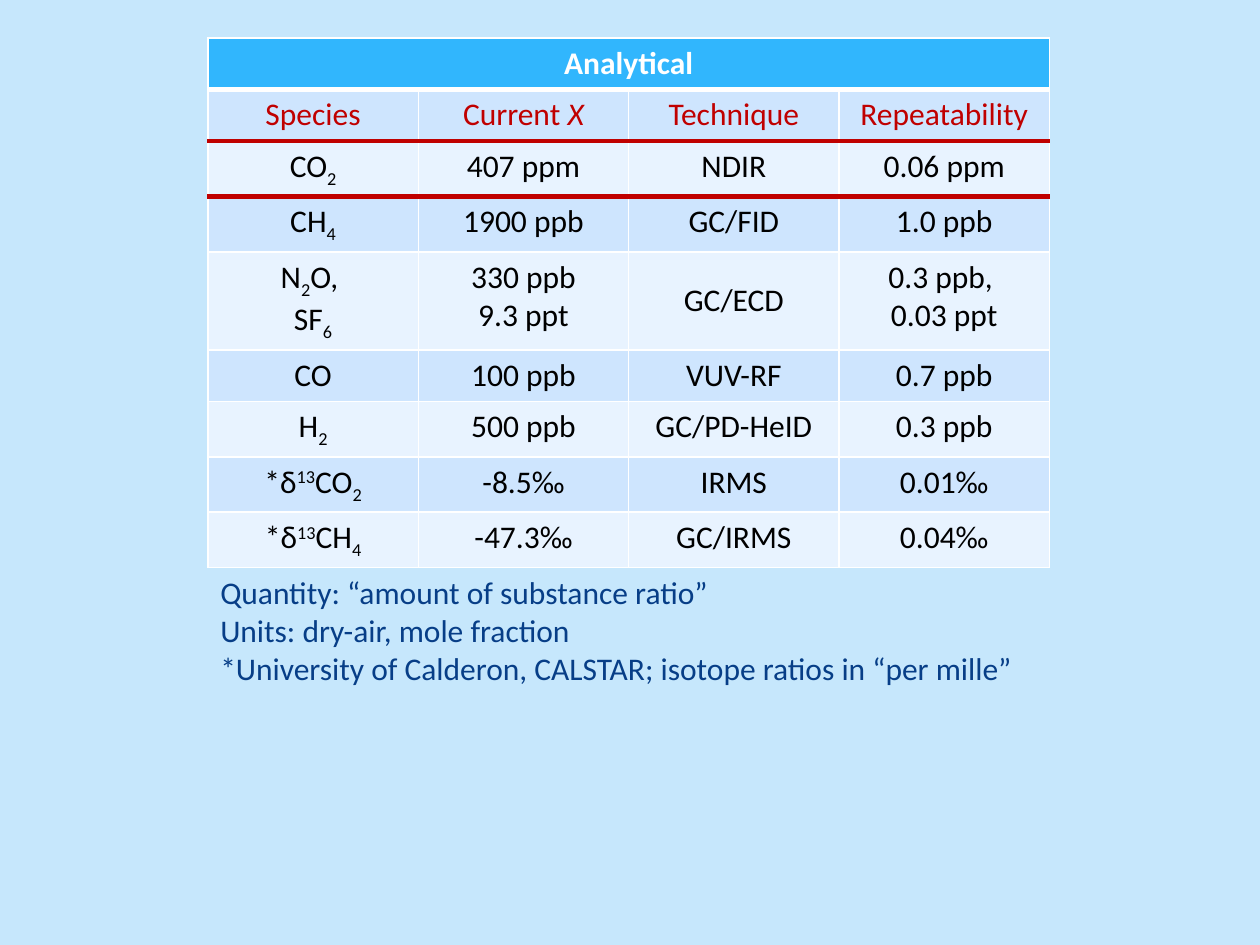
import pptx
import pptx.dml.color
import pptx.enum.text
import pptx.oxml
import pptx.oxml.ns
import pptx.util
from pptx.util import Inches

WHITE, RED, BLACK, NAVY = "FFFFFF", "C00000", "000000", "073E87"
HEADER, BAND_DARK, BAND_LIGHT = "31B6FD", "CEE5FE", "E8F3FF"
CENTER = pptx.enum.text.PP_ALIGN.CENTER
MIDDLE = pptx.enum.text.MSO_ANCHOR.MIDDLE

# Spans are split by "|"; a span starting with _ is subscript,
# with ^ superscript and with ~ italic.
ROWS = [
    ["Analytical", "", "", ""],
    ["Species", "Current |~Χ", "Technique", "Repeatability"],
    ["CO|_2", "407 ppm", "NDIR", "0.06 ppm"],
    ["CH|_4", "1900 ppb", "GC/FID", "1.0 ppb"],
    ["N|_2|O, \nSF|_6", "330 ppb\n9.3 ppt", "GC/ECD", "0.3 ppb, \n0.03 ppt"],
    ["CO", "100 ppb", "VUV-RF", "0.7 ppb"],
    ["H|_2", "500 ppb", "GC/PD-HeID", "0.3 ppb"],
    ["*δ|^13|CO|_2", "-8.5‰", "IRMS", "0.01‰"],
    ["*δ|^13|CH|_4", "-47.3‰", "GC/IRMS", "0.04‰"],
]
# Horizontal rules by index, counted from the top edge: colour and points
HEAVY_RULES = {1: (WHITE, 3), 2: (RED, 3), 3: (RED, 3)}
THIN_RULE = (WHITE, 1)

NOTES = (
    "Quantity: “amount of substance ratio”\n"
    "Units: dry-air, mole fraction\n"
    "*University of Calderon, CALSTAR; isotope ratios in “per mille”"
)


def rgb(value):
    return pptx.dml.color.RGBColor.from_string(value)


def write_text(frame, text, color=BLACK, size=18, font="Calibri", bold=False, align=None):
    """Write marked-up text into a frame, one paragraph per line."""
    for index, line in enumerate(text.split("\n")):
        para = frame.add_paragraph() if index else frame.paragraphs[0]
        para.alignment = align
        for piece in line.split("|"):
            mark = piece[:1] if piece[:1] in ("_", "^", "~") else ""
            span = para.add_run()
            span.text = piece[len(mark):]
            span.font.name = font
            span.font.size = pptx.util.Pt(size)
            span.font.bold = bold
            span.font.italic = mark == "~"
            span.font.color.rgb = rgb(color)
            if mark in ("_", "^"):
                baseline = "-25000" if mark == "_" else "30000"
                span.font._element.set("baseline", baseline)


def set_border(cell, side, color, points):
    """Draw one cell edge; side is L, R, T or B."""
    namespace = pptx.oxml.ns.nsdecls("a")
    cell._tc.get_or_add_tcPr().append(pptx.oxml.parse_xml(
        f'<a:ln{side} {namespace} w="{points * 12700}"><a:solidFill>'
        f'<a:srgbClr val="{color}"/></a:solidFill></a:ln{side}>'))


class SlideBuilder:
    def __init__(self, deck, background):
        self.slide = deck.slides.add_slide(deck.slide_layouts[6])
        self.slide.background.fill.solid()
        self.slide.background.fill.fore_color.rgb = rgb(background)

    def add_species_table(self, left, top, column_width, row_height):
        columns = len(ROWS[0])
        table = self.slide.shapes.add_table(
            len(ROWS), columns, Inches(left), Inches(top),
            Inches(column_width * columns), Inches(row_height * len(ROWS))).table
        table.cell(0, 0).merge(table.cell(0, columns - 1))
        for column in table.columns:
            column.width = Inches(column_width)
        for row, texts in enumerate(ROWS):
            table.rows[row].height = Inches(row_height)
            fill = HEADER if row == 0 else BAND_DARK if row % 2 else BAND_LIGHT
            color = {0: WHITE, 1: RED}.get(row, BLACK)
            for column, text in enumerate(texts):
                cell = table.cell(row, column)
                for side, rule in (
                    ("L", THIN_RULE),
                    ("R", THIN_RULE),
                    ("T", HEAVY_RULES.get(row, THIN_RULE)),
                    ("B", HEAVY_RULES.get(row + 1, THIN_RULE)),
                ):
                    set_border(cell, side, *rule)
                cell.fill.solid()
                cell.fill.fore_color.rgb = rgb(fill)
                if text:
                    write_text(cell.text_frame, text, color=color,
                               bold=row == 0, align=CENTER)
                if text == "GC/ECD":
                    cell.vertical_anchor = MIDDLE

    def add_text(self, left, top, width, height, text, **style):
        box = self.slide.shapes.add_textbox(
            Inches(left), Inches(top), Inches(width), Inches(height))
        box.text_frame.word_wrap = True
        write_text(box.text_frame, text, **style)


def main():
    deck = pptx.Presentation()
    deck.slide_width, deck.slide_height = Inches(10), Inches(7.5)
    builder = SlideBuilder(deck, background="C6E7FC")
    builder.add_species_table(1.65, 0.3, column_width=1.67, row_height=0.41)
    builder.add_text(1.65, 4.5, 6.74, 1.01, NOTES, color=NAVY)
    deck.save("out.pptx")


if __name__ == "__main__":
    main()
